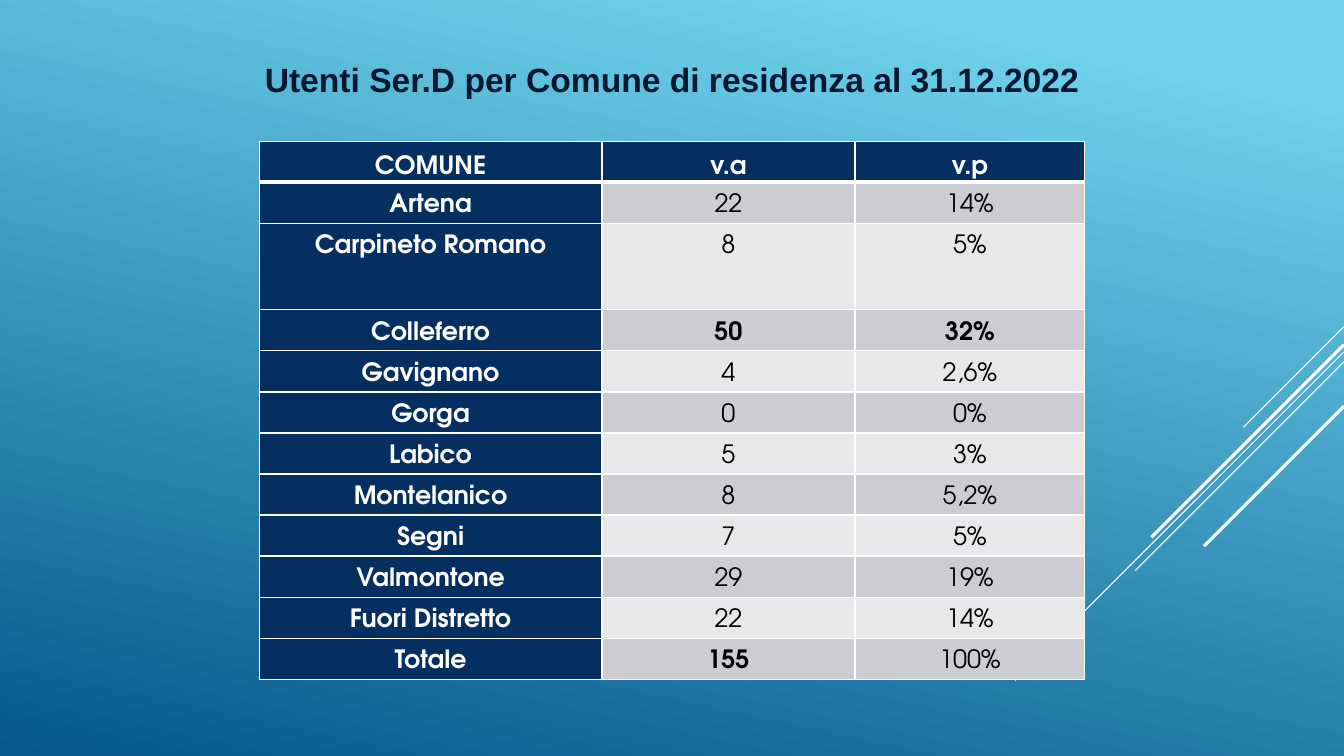
"""Build the slide of Ser.D users by municipality of residence."""
import pptx
import pptx.dml.color
import pptx.enum.shapes
import pptx.enum.text
import pptx.oxml.ns
import pptx.util
from lxml import etree

Inches = pptx.util.Inches
Pt = pptx.util.Pt
ALIGN = pptx.enum.text.PP_ALIGN
ANCHOR = pptx.enum.text.MSO_ANCHOR
qn = pptx.oxml.ns.qn

WIDTH, HEIGHT = 13.33, 7.5
ROWS = [
    ("COMUNE", "v.a", "v.p"),
    ("Artena", "22", "14%"),
    ("Carpineto Romano", "8", "5%"),
    ("Colleferro", "50", "32%"),
    ("Gavignano", "4", "2,6%"),
    ("Gorga", "0", "0%"),
    ("Labico", "5", "3%"),
    ("Montelanico", "8", "5,2%"),
    ("Segni", "7", "5%"),
    ("Valmontone", "29", "19%"),
    ("Fuori Distretto", "22", "14%"),
    ("Totale", "155", "100%"),
]
BOLD_VALUES = {"50", "32%", "155"}
COLUMN_WIDTHS = (3.4, 2.51, 2.28)
TABLE_HEIGHT, TALL_ROW, TALL_HEIGHT = 5.34, 2, 0.86
DIAGONALS = [(3.24, 1, 0.75), (3.49, 3.26, 0.75), (3.59, 2.07, 0.75),
             (3.42, 1.91, 2.25), (4.03, 1.39, 2.25)]


def rgb(value):
    return pptx.dml.color.RGBColor.from_string(value)


class Deck:
    navy, white, black, ink = "052F61", "FFFFFF", "000000", "031730"
    bands = ("E7E8EA", "CCCDD2")
    title_font, table_font = "Arial", "TeX Gyre Adventor"

    def __init__(self, prs):
        self.s = prs.slides.add_slide(prs.slide_layouts[6])

    def background(self, stops, angle):
        fill = self.s.background.fill
        fill.gradient()
        fill.gradient_angle = 360 - angle
        for stop, (position, color) in zip(fill.gradient_stops, stops):
            stop.position = position
            stop.color.rgb = rgb(color)

    def diagonal(self, top, reach, width):
        line = self.s.shapes.add_connector(
            pptx.enum.shapes.MSO_CONNECTOR.STRAIGHT, Inches(WIDTH),
            Inches(top), Inches(WIDTH - reach), Inches(top + reach))
        line.line.color.rgb = rgb(self.white)
        line.line.width = Pt(width)
        etree.SubElement(line._element.spPr, qn("a:effectLst"))

    def style(self, p, font, size, color, bold):
        p.alignment = ALIGN.CENTER
        for r in p.runs:
            r.font.name = font
            r.font.size = Pt(size)
            r.font.bold = bold
            r.font.color.rgb = rgb(color)

    def title(self, text, left, top, width, height):
        sp = self.s.shapes.add_textbox(
            Inches(left), Inches(top), Inches(width), Inches(height))
        tf = sp.text_frame
        tf.word_wrap = True
        tf.vertical_anchor = ANCHOR.TOP
        tf.margin_top = Inches(0.07)
        tf.text = text
        self.style(tf.paragraphs[0], self.title_font, 24, self.ink, True)

    def border(self, cell, side, width):
        ln = etree.SubElement(cell._tc.get_or_add_tcPr(), qn(f"a:ln{side}"),
                              w=str(Pt(width)))
        fill = etree.SubElement(ln, qn("a:solidFill"))
        etree.SubElement(fill, qn("a:srgbClr"), val=self.white)

    def cell(self, cell, text, row, column):
        heading = row == 0 or column == 0
        cell.margin_left = cell.margin_right = Inches(0.07)
        cell.margin_top = cell.margin_bottom = 0
        cell.vertical_anchor = ANCHOR.MIDDLE if row == 0 else ANCHOR.TOP
        widths = {"L": 1, "R": 1, "T": 3 if row == 1 else 1,
                  "B": 3 if row == 0 else 1}
        for side, width in widths.items():
            self.border(cell, side, width)
        cell.fill.solid()
        cell.fill.fore_color.rgb = rgb(
            self.navy if heading else self.bands[row % 2])
        cell.text_frame.text = text
        p = cell.text_frame.paragraphs[0]
        p.line_spacing = 1.5
        p.space_after = Pt(10)
        self.style(p, self.table_font, 18,
                   self.white if heading else self.black,
                   heading or text in BOLD_VALUES)

    def table(self, rows, left, top):
        table = self.s.shapes.add_table(
            len(rows), len(COLUMN_WIDTHS), Inches(left), Inches(top),
            Inches(sum(COLUMN_WIDTHS)), Inches(TABLE_HEIGHT)).table
        table.first_col = True
        for column, width in zip(table.columns, COLUMN_WIDTHS):
            column.width = Inches(width)
        row_height = (TABLE_HEIGHT - TALL_HEIGHT) / (len(rows) - 1)
        for i, values in enumerate(rows):
            table.rows[i].height = Inches(
                TALL_HEIGHT if i == TALL_ROW else row_height)
            for j, text in enumerate(values):
                self.cell(table.cell(i, j), text, i, j)


def main():
    prs = pptx.Presentation()
    prs.slide_width, prs.slide_height = Inches(WIDTH), Inches(HEIGHT)
    deck = Deck(prs)
    deck.background([(0.1, "6ED2EB"), (1, "06588E")], 102)
    for diagonal in DIAGONALS:
        deck.diagonal(*diagonal)
    deck.table(ROWS, 2.57, 1.4)
    deck.title("Utenti Ser.D per Comune di residenza al 31.12.2022",
               1.93, 0.51, 9.47, 0.81)
    prs.save("out.pptx")


if __name__ == "__main__":
    main()
